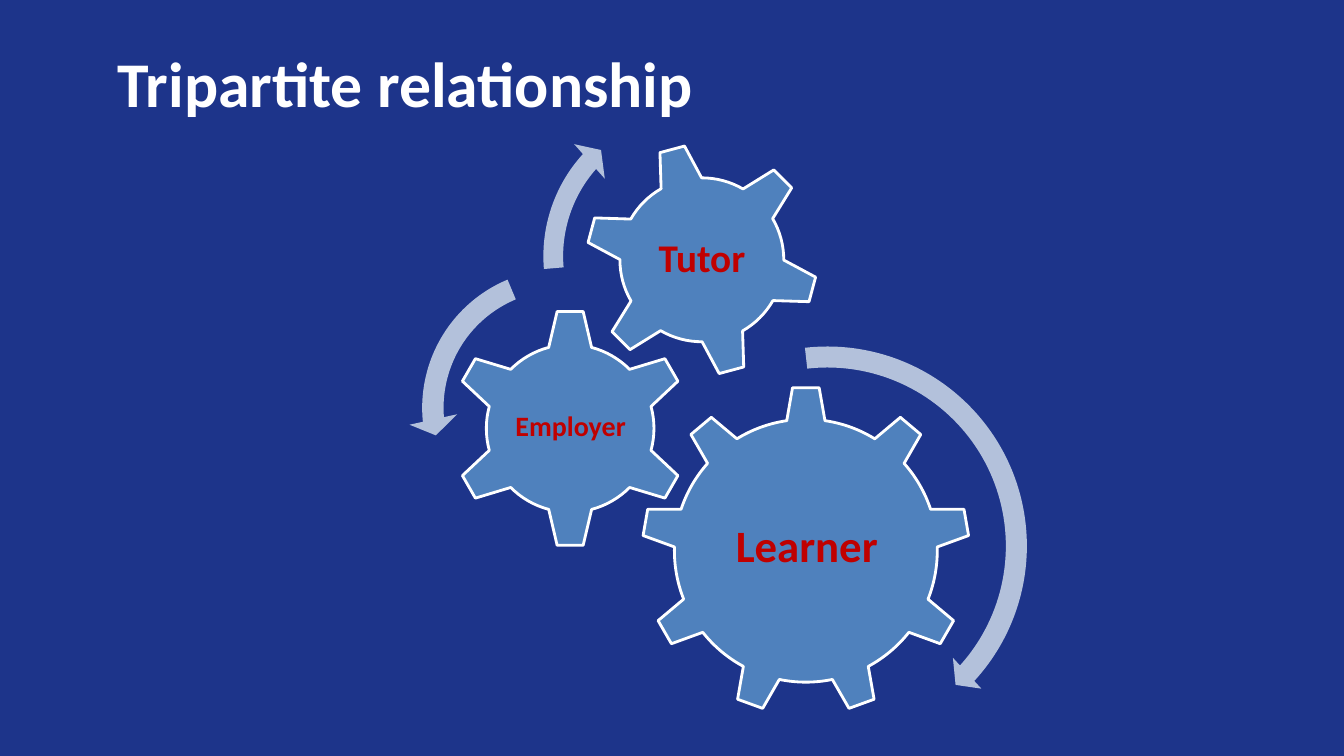
"""Build the slide on the tripartite relationship as three meshing gears."""
from dataclasses import dataclass

from pptx import Presentation
from pptx.dml.color import RGBColor
from pptx.enum.shapes import MSO_SHAPE
from pptx.enum.text import MSO_ANCHOR, MSO_AUTO_SIZE, PP_ALIGN
from pptx.util import Emu, Pt

GEAR_6, GEAR_9 = MSO_SHAPE.GEAR_6, MSO_SHAPE.GEAR_9
CLOCKWISE, ANTICLOCKWISE = MSO_SHAPE.CIRCULAR_ARROW, MSO_SHAPE.LEFT_CIRCULAR_ARROW
TOP, MIDDLE = MSO_ANCHOR.TOP, MSO_ANCHOR.MIDDLE
LEFT, CENTER = PP_ALIGN.LEFT, PP_ALIGN.CENTER
NO_AUTOFIT = MSO_AUTO_SIZE.NONE

EMU_PER_PX = 9525
TITLE_ONLY = 5
FONT = "Calibri"
NAVY, WHITE, BLUE, PALE, RED = "1D348A", "FFFFFF", "4F81BD", "B3C1DB", "C00000"


@dataclass(frozen=True)
class Gear:
    kind: MSO_SHAPE
    left: int
    top: int
    size: int
    rotation: int
    party: str
    label_box: tuple[int, int, int, int]
    points: int


@dataclass(frozen=True)
class Turn:
    kind: MSO_SHAPE
    left: int
    top: int
    size: int
    adjustments: tuple[float, ...]


GEARS = (
    Gear(GEAR_9, 611, 368, 313, 0, "Learner", (675, 441, 187, 161), 32),
    Gear(GEAR_6, 429, 294, 228, 0, "Employer", (487, 351, 113, 112), 20),
    Gear(GEAR_6, 557, 136, 223, 345, "Tutor", (606, 185, 125, 125), 28),
)
TURNS = (
    Turn(CLOCKWISE, 588, 320, 400, (0.05, 2.99, 25.39, 158.12, 0.05)),
    Turn(ANTICLOCKWISE, 389, 243, 291, (0.07, 4.3, 104.89, 148.38, 0.08)),
    Turn(CLOCKWISE, 505, 87, 314, (0.06, 3.94, 133.14, 105.08, 0.07)),
)


def px(length: int) -> Emu:
    """Turn pixels into EMU."""
    return Emu(length * EMU_PER_PX)


def paint(fill, colour: str) -> None:
    """Make a fill solid in a hex colour."""
    fill.solid()
    fill.fore_color.rgb = RGBColor.from_string(colour)


def write(frame, wording: str, points: float, colour: str, align, anchor, insets) -> None:
    """Set one bold paragraph in a text frame."""
    frame.text = wording
    frame.word_wrap = True
    frame.auto_size = NO_AUTOFIT
    frame.vertical_anchor = anchor
    frame.margin_left, frame.margin_top, frame.margin_right, frame.margin_bottom = map(px, insets)
    paragraph = frame.paragraphs[0]
    paragraph.alignment = align
    font = paragraph.runs[0].font
    font.name, font.size, font.bold = FONT, Pt(points), True
    font.color.rgb = RGBColor.from_string(colour)


def add_square_shape(slide, part: Gear | Turn, colour: str):
    """Add a preset shape in a square frame without line or shadow."""
    shape = slide.shapes.add_shape(
        part.kind, px(part.left), px(part.top), px(part.size), px(part.size))
    shape.shadow.inherit = False
    paint(shape.fill, colour)
    shape.line.fill.background()
    return shape


def add_gear(slide, gear: Gear) -> None:
    """Add an outlined gear and the upright label of its party."""
    wheel = add_square_shape(slide, gear, BLUE)
    wheel.rotation = gear.rotation
    paint(wheel.line.fill, WHITE)
    wheel.line.width = Pt(2)
    label = slide.shapes.add_textbox(*map(px, gear.label_box))
    write(label.text_frame, gear.party, gear.points, RED, CENTER, MIDDLE, (3, 3, 3, 3))
    label.text_frame.paragraphs[0].line_spacing = 0.9


def add_turn(slide, turn: Turn) -> None:
    """Add a curved arrow that shows which way a gear turns."""
    arrow = add_square_shape(slide, turn, PALE)
    for index, value in enumerate(turn.adjustments):
        arrow.adjustments[index] = value


def main() -> None:
    """Build and save the slide."""
    deck = Presentation()
    deck.slide_width, deck.slide_height = px(1280), px(720)
    slide = deck.slides.add_slide(deck.slide_layouts[TITLE_ONLY])
    paint(slide.background.fill, NAVY)

    title = slide.shapes.title
    title.left, title.top, title.width, title.height = map(px, (112, 40, 984, 75))
    write(title.text_frame, "Tripartite relationship", 45.5, WHITE, LEFT, TOP, (0, 2, 0, 0))

    for gear in GEARS:
        add_gear(slide, gear)
    for turn in TURNS:
        add_turn(slide, turn)
    deck.save("out.pptx")


if __name__ == "__main__":
    main()
